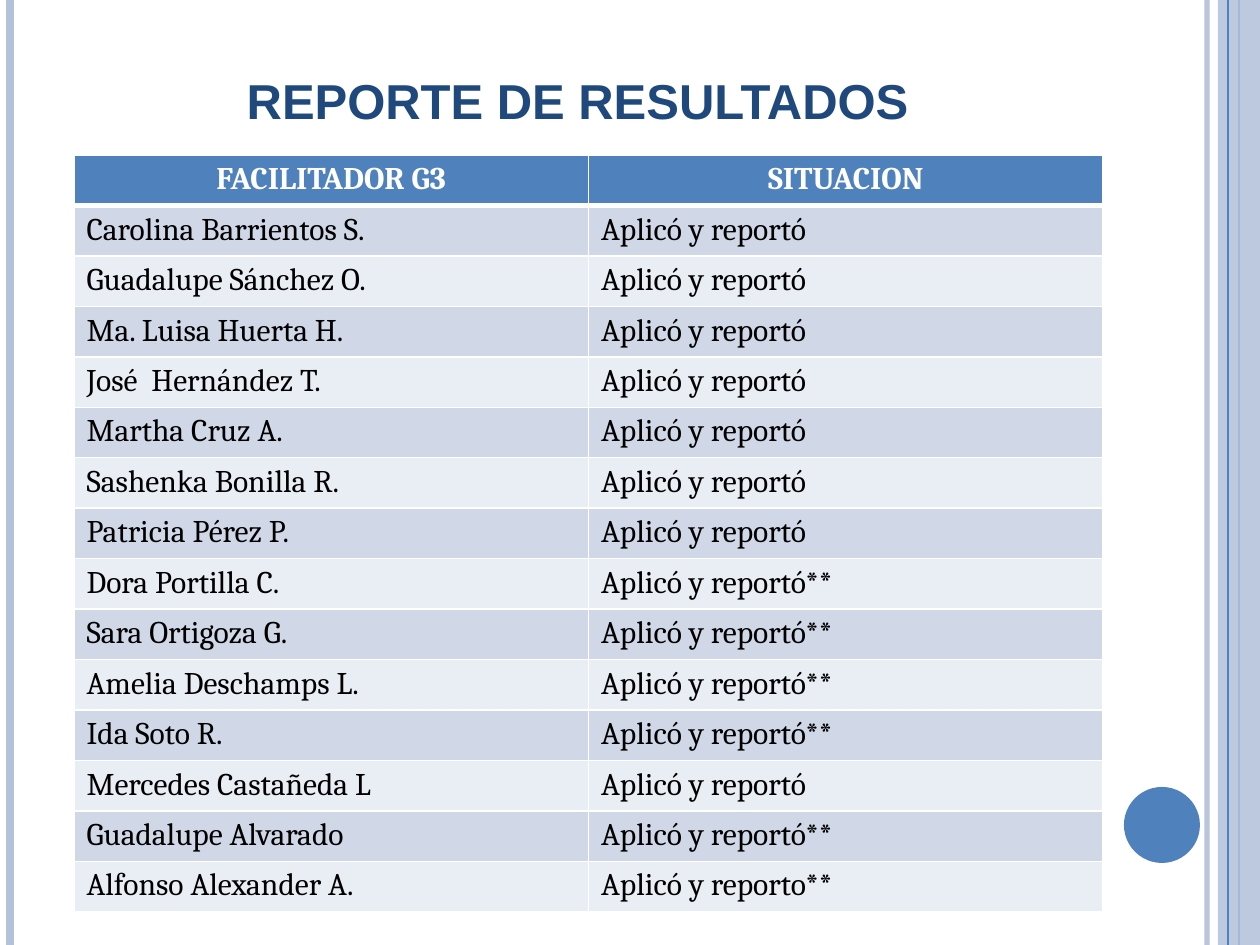
from lxml.etree import SubElement
from pptx import Presentation
from pptx.dml.color import RGBColor as Rgb
from pptx.enum.shapes import MSO_CONNECTOR as Connector, MSO_SHAPE as Shape
from pptx.enum.text import MSO_ANCHOR as Anchor, PP_ALIGN as Align
from pptx.oxml.ns import qn
from pptx.util import Emu, Pt

PX_PER_INCH = 126
SLIDE_BOX = (0, 0, 1260, 945)
TITLE_BOX = (63, 38, 1029, 157)
TABLE_BOX = (74, 155, 1029, 720)

COLORS = {
    "accent": "4F81BD",
    "stripe": "B3C1DB",
    "title": "1F497D",
    "white": "FFFFFF",
    "black": "000000",
    "odd_row": "D0D8E8",
    "even_row": "E9EDF4",
}

TITLE_FORMAT = {"name": "Arial", "size": Pt(28), "bold": True}
HEADER_FORMAT = {"name": "Cambria", "size": Pt(18), "bold": True}
BODY_FORMAT = {"name": "Cambria", "size": Pt(18), "bold": False}

DONE = "Aplicó y reportó"
MARKED = DONE + "**"
HEADERS = ("FACILITADOR G3", "SITUACION")
FACILITATORS = [
    ("Carolina Barrientos S.", DONE),
    ("Guadalupe Sánchez O.", DONE),
    ("Ma. Luisa Huerta H.", DONE),
    ("José  Hernández T.", DONE),
    ("Martha Cruz A.", DONE),
    ("Sashenka Bonilla R.", DONE),
    ("Patricia Pérez P.", DONE),
    ("Dora Portilla C.", MARKED),
    ("Sara Ortigoza G.", MARKED),
    ("Amelia Deschamps L.", MARKED),
    ("Ida Soto R.", MARKED),
    ("Mercedes Castañeda L", DONE),
    ("Guadalupe Alvarado", MARKED),
    ("Alfonso Alexander A.", "Aplicó y reporto**"),
]


def px(length):
    return Emu(round(length * 914400 / PX_PER_INCH))


def color(name):
    return Rgb.from_string(COLORS[name])


def set_alpha(fill_parent, percent):
    for element in fill_parent.iter(qn("a:srgbClr")):
        SubElement(element, qn("a:alpha"), val=str(percent * 1000))


def write(text_frame, text, formats, color_name, align):
    paragraph = text_frame.paragraphs[0]
    paragraph.alignment = align
    run = paragraph.add_run()
    run.text = text
    for attribute, value in formats.items():
        setattr(run.font, attribute, value)
    run.font.color.rgb = color(color_name)


def add_stripe(slide, x, top, height, color_name, width, alpha=100):
    line = slide.shapes.add_connector(
        Connector.STRAIGHT, px(x), px(top), px(x), px(top + height))
    line.line.color.rgb = color(color_name)
    line.line.width = Pt(width)
    properties = line._element.spPr
    if alpha < 100:
        set_alpha(properties, alpha)
    SubElement(properties, qn("a:effectLst"))


def add_plain_shape(slide, kind, box, color_name):
    shape = slide.shapes.add_shape(kind, *map(px, box))
    shape.shadow.inherit = False
    shape.fill.solid()
    shape.fill.fore_color.rgb = color(color_name)
    shape.line.fill.background()
    return shape


def add_decoration(slide, box):
    left, top, width, height = box
    right = left + width
    # Stripes behind the band
    add_stripe(slide, right - 53, top, height, "stripe", 3, alpha=93)
    add_stripe(slide, left + 10, top, height, "stripe", 4.5)
    add_stripe(slide, right - 21, top, height, "accent", 1.5)
    # Translucent band with a thin line over it
    band = add_plain_shape(
        slide, Shape.RECTANGLE, (right - 42, top, 42, height), "stripe")
    set_alpha(band._element.spPr, 87)
    add_stripe(slide, right - 32, top, height, "accent", 0.75)
    # Circle
    add_plain_shape(
        slide, Shape.OVAL, (right - 136, top + 787, 76, 76), "accent")


def add_title(slide, box):
    title = slide.shapes.add_textbox(*map(px, box))
    text_frame = title.text_frame
    text_frame.word_wrap = True
    text_frame.vertical_anchor = Anchor.BOTTOM
    text_frame.margin_bottom = px(66)
    write(text_frame, "REPORTE DE RESULTADOS", TITLE_FORMAT, "title", Align.CENTER)


def set_borders(cell, widths):
    properties = cell._tc.get_or_add_tcPr()
    for index, (side, width) in enumerate(widths.items()):
        border = properties.makeelement(qn(f"a:{side}"), {"w": str(Pt(width))})
        fill = SubElement(border, qn("a:solidFill"))
        SubElement(fill, qn("a:srgbClr"), val=COLORS["white"])
        properties.insert(index, border)


def add_results_table(slide, box):
    rows = [HEADERS, *FACILITATORS]
    table = slide.shapes.add_table(
        len(rows), len(HEADERS), *map(px, box)).table
    for row_index, values in enumerate(rows):
        is_header = row_index == 0
        if is_header:
            style = (HEADER_FORMAT, "white", Align.CENTER)
            fill_name = "accent"
        else:
            style = (BODY_FORMAT, "black", Align.LEFT)
            fill_name = "odd_row" if row_index % 2 else "even_row"
        widths = {"lnL": 1, "lnR": 1,
                  "lnT": 3 if row_index == 1 else 1,
                  "lnB": 3 if is_header else 1}
        for column_index, text in enumerate(values):
            cell = table.cell(row_index, column_index)
            cell.fill.solid()
            cell.fill.fore_color.rgb = color(fill_name)
            set_borders(cell, widths)
            write(cell.text_frame, text, *style)


def main():
    presentation = Presentation()
    presentation.slide_width, presentation.slide_height = map(px, SLIDE_BOX[2:])
    slide = presentation.slides.add_slide(presentation.slide_layouts[6])
    add_decoration(slide, SLIDE_BOX)
    add_title(slide, TITLE_BOX)
    add_results_table(slide, TABLE_BOX)
    presentation.save("out.pptx")


if __name__ == "__main__":
    main()
